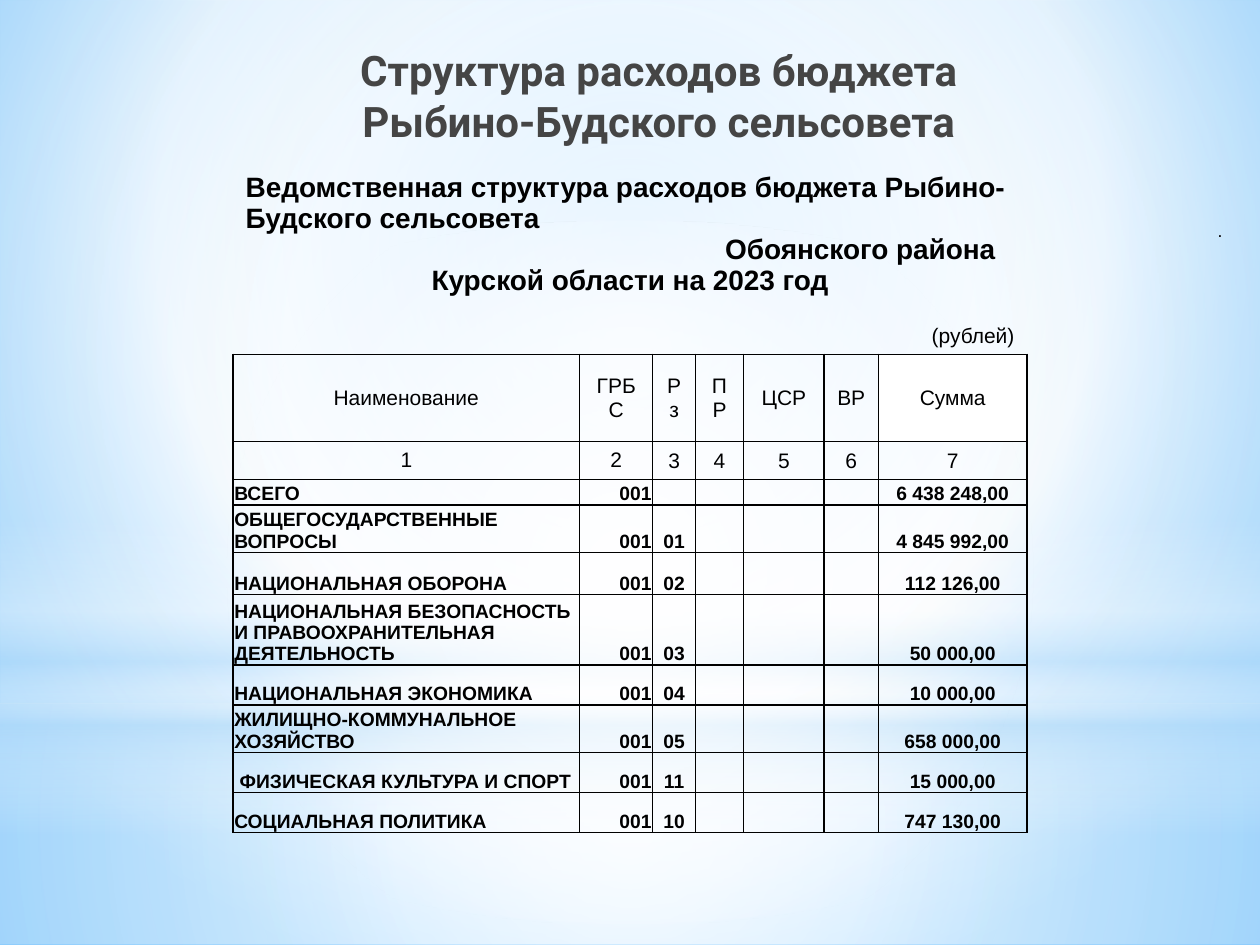
from lxml import etree
from pptx import Presentation
from pptx.dml.color import RGBColor
from pptx.enum.shapes import MSO_SHAPE as Shape
from pptx.enum.text import MSO_ANCHOR as Anchor, PP_ALIGN as Align
from pptx.oxml import parse_xml
from pptx.oxml.ns import nsdecls, qn
from pptx.util import Pt

BLACK = RGBColor(0x00, 0x00, 0x00)
GRAY = RGBColor(0x45, 0x45, 0x45)
WHITE = RGBColor(0xFF, 0xFF, 0xFF)
SKY = RGBColor(0xB4, 0xDC, 0xFA)
LIGHT_BLUE = RGBColor(0x9E, 0xD5, 0xFF)
BLUE = RGBColor(0x5B, 0xB9, 0xFF)
CENTER = (50, 50, 50, 50)

COLUMNS = (198, 41.8, 24.5, 27.4, 46.1, 31, 85)
ROWS = (85, 29.5, 50, 21.7, 14.4, 27, 24, 40.3, 22.9, 27, 22.9, 22.9)
HEADINGS = ("Наименование", "ГРБС", "Рз", "ПР", "ЦСР", "ВР", "Сумма")
EXPENSES = (
    ("ВСЕГО", "", "6 438 248,00"),
    ("ОБЩЕГОСУДАРСТВЕННЫЕ ВОПРОСЫ", "01", "4 845 992,00"),
    ("НАЦИОНАЛЬНАЯ ОБОРОНА", "02", "112 126,00"),
    ("НАЦИОНАЛЬНАЯ БЕЗОПАСНОСТЬ И ПРАВООХРАНИТЕЛЬНАЯ ДЕЯТЕЛЬНОСТЬ",
     "03", "50 000,00"),
    ("НАЦИОНАЛЬНАЯ ЭКОНОМИКА", "04", "10 000,00"),
    ("ЖИЛИЩНО-КОММУНАЛЬНОЕ ХОЗЯЙСТВО", "05", "658 000,00"),
    (" ФИЗИЧЕСКАЯ КУЛЬТУРА И СПОРТ", "11", "15 000,00"),
    ("СОЦИАЛЬНАЯ ПОЛИТИКА", "10", "747 130,00"),
)


def apply_gradient(solid_fill, stops, focus=None):
    marks = "".join(
        f'<a:gs pos="{pos * 1000}"><a:srgbClr val="{color}">'
        f'<a:alpha val="{opacity * 1000}"/></a:srgbClr></a:gs>'
        for pos, color, opacity in stops)
    if focus:
        left, top, right, bottom = (side * 1000 for side in focus)
        direction = (f'<a:path path="circle"><a:fillToRect l="{left}" t="{top}" '
                     f'r="{right}" b="{bottom}"/></a:path>')
    else:
        direction = '<a:lin ang="5400000" scaled="0"/>'
    gradient = parse_xml(f'<a:gradFill {nsdecls("a")} rotWithShape="1">'
                         f'<a:gsLst>{marks}</a:gsLst>{direction}</a:gradFill>')
    solid_fill.getparent().replace(solid_fill, gradient)


def add_backdrop(slide, width):
    slide.background.fill.solid()
    apply_gradient(slide.element.find(".//" + qn("a:solidFill")),
                   ((0, LIGHT_BLUE, 100), (60, WHITE, 100), (100, BLUE, 100)),
                   (20, 10, 20, 60))
    layers = (
        (Shape.RECTANGLE, 402, 138,
         ((0, WHITE, 91), (37, WHITE, 76), (100, SKY, 79)), CENTER),
        (Shape.RECTANGLE, 0, 402,
         ((0, WHITE, 89), (48, WHITE, 62), (100, SKY, 79)), CENTER),
        (Shape.RECTANGLE, 297, 180,
         ((0, WHITE, 0), (29, WHITE, 30), (45, SKY, 40),
          (55, WHITE, 26), (65, SKY, 60), (100, WHITE, 0)), None),
        (Shape.OVAL, 126, 402, ((0, WHITE, 100), (56, WHITE, 0)), CENTER),
    )
    for kind, top, height, stops, focus in layers:
        glow = slide.shapes.add_shape(kind, 0, Pt(top), Pt(width), Pt(height))
        glow.shadow.inherit = False
        glow.line.fill.background()
        glow.fill.solid()
        apply_gradient(glow.element.spPr.find(qn("a:solidFill")), stops, focus)


def format_text(frame, size, align, bold=False, color=BLACK, font="Arial"):
    for paragraph in frame.paragraphs:
        paragraph.alignment = align
        for run in paragraph.runs:
            run.font.size = Pt(size)
            run.font.bold = bold
            run.font.name = font
            run.font.color.rgb = color
        if not paragraph.runs:
            ending = paragraph._p.get_or_add_endParaRPr()
            ending.set("sz", str(size * 100))


def add_label(slide, box, text, **style):
    frame = slide.shapes.add_textbox(*(Pt(side) for side in box)).text_frame
    frame.word_wrap = True
    frame.text = text
    format_text(frame, **style)


def set_borders(cell, visible):
    properties = cell._tc.get_or_add_tcPr()
    for side in ("L", "R", "T", "B"):
        line = etree.SubElement(properties, qn(f"a:ln{side}"), w="12700")
        if side in visible:
            fill = etree.SubElement(line, qn("a:solidFill"))
            etree.SubElement(fill, qn("a:srgbClr"), val=str(BLACK))
        else:
            etree.SubElement(line, qn("a:noFill"))


def fill_cell(cell, text, size, align, anchor, bold=False, tight=False):
    cell.text = text
    cell.vertical_anchor = anchor
    if tight:
        cell.margin_left = cell.margin_right = cell.margin_top = Pt(0.7)
        cell.margin_bottom = 0
    format_text(cell.text_frame, size, align, bold)


def fill_caption(table):
    caption = table.cell(0, 0)
    caption.merge(table.cell(0, len(COLUMNS) - 1))
    fill_cell(caption,
              "Ведомственная структура расходов бюджета Рыбино-Будского сельсовета\n"
              "Обоянского района\nКурской области на 2023 год",
              16, Align.LEFT, Anchor.BOTTOM, bold=True)
    _, district, region = caption.text_frame.paragraphs
    district._p.get_or_add_pPr().set("marL", str(Pt(274)))
    region.alignment = Align.CENTER


def add_budget_table(slide, left, top):
    frame = slide.shapes.add_table(len(ROWS), len(COLUMNS), Pt(left), Pt(top),
                                   Pt(sum(COLUMNS)), Pt(sum(ROWS)))
    table = frame.table
    table.first_row = table.horz_banding = False
    for column, width in zip(table.columns, COLUMNS):
        column.width = Pt(width)
    for row, height in zip(table.rows, ROWS):
        row.height = Pt(height)
    for index, row in enumerate(table.rows):
        for cell in row.cells:
            set_borders(cell, "" if index == 0 else "B" if index == 1 else "LRTB")
            cell.fill.background()

    fill_caption(table)
    last = len(COLUMNS) - 1
    for index, heading in enumerate(HEADINGS):
        fill_cell(table.cell(1, index), "(рублей)" if index == last else "",
                  12, Align.RIGHT, Anchor.BOTTOM)
        fill_cell(table.cell(2, index), heading, 12, Align.CENTER, Anchor.MIDDLE)
        fill_cell(table.cell(3, index), str(index + 1), 12, Align.CENTER,
                  Anchor.TOP if index < 2 else Anchor.BOTTOM)
    table.cell(2, last).fill.solid()
    table.cell(2, last).fill.fore_color.rgb = WHITE

    aligns = (Align.LEFT, Align.RIGHT) + (Align.CENTER,) * 5
    for index, (name, section, amount) in enumerate(EXPENSES, start=4):
        values = (name, "001", section, "", "", "", amount)
        for cell, value, align in zip(table.rows[index].cells, values, aligns):
            fill_cell(cell, value, 11, align, Anchor.BOTTOM, bold=True, tight=True)


def main():
    presentation = Presentation()
    presentation.slide_width, presentation.slide_height = Pt(720), Pt(540)
    slide = presentation.slides.add_slide(presentation.slide_layouts[6])
    add_backdrop(slide, 720)
    add_label(slide, (70.5, 22, 612, 88),
              "Структура расходов бюджета\nРыбино-Будского сельсовета",
              size=24, align=Align.CENTER, bold=True, color=GRAY, font="Roboto")
    add_label(slide, (581, 122.4, 124.6, 19.4), ".", size=10, align=Align.RIGHT)
    add_budget_table(slide, 133.2, 88)
    presentation.save("out.pptx")


if __name__ == "__main__":
    main()
